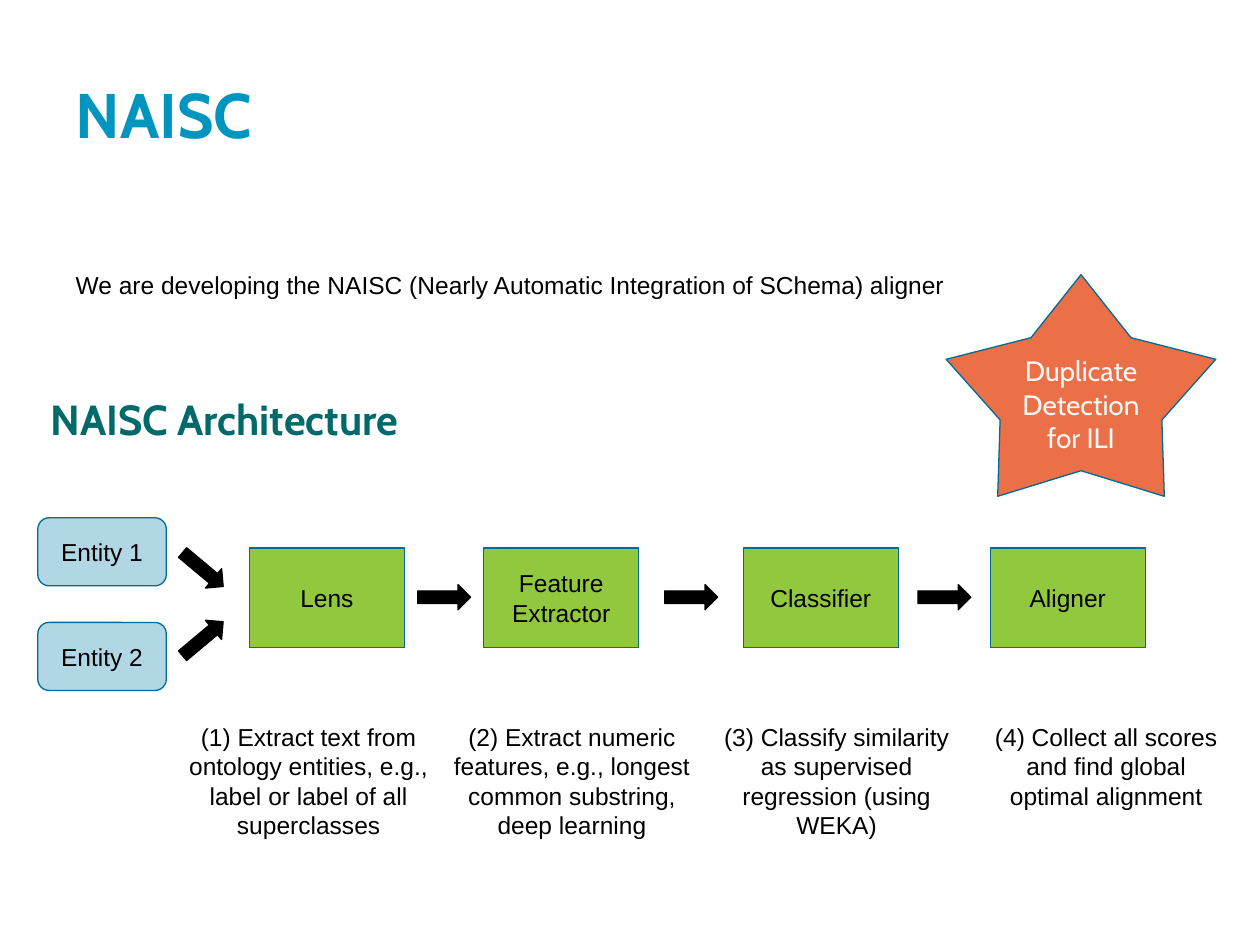
from dataclasses import dataclass
from itertools import pairwise

from pptx import Presentation
from pptx.dml.color import RGBColor as RGB
from pptx.enum.shapes import MSO_SHAPE as SHAPE
from pptx.enum.text import MSO_ANCHOR as ANCHOR, MSO_AUTO_SIZE as AUTO, PP_ALIGN as ALIGN
from pptx.util import Inches, Pt


@dataclass(frozen=True)
class Theme:
    title: str = "0095BF"
    heading: str = "00696A"
    ink: str = "000000"
    pale: str = "F8F8F8"
    entity: str = "B0D7E3"
    stage: str = "92C83E"
    star: str = "EB7047"
    outline: str = "006B94"
    display: str = "Cabin"
    text: str = "Arial"
    title_size: int = 36
    heading_size: int = 24
    star_size: int = 16
    text_size: int = 14


class Deck:
    COLS, ROWS = 100, 75

    def __init__(self, theme):
        self.theme = theme
        self.prs = Presentation()
        self.prs.slide_width, self.prs.slide_height = Inches(10), Inches(7.5)
        self.s = self.prs.slides.add_slide(self.prs.slide_layouts.get_by_name("Comparison"))

    def box(self, x, y, w, h):
        col = self.prs.slide_width / self.COLS
        row = self.prs.slide_height / self.ROWS
        return [round(v) for v in (x * col, y * row, w * col, h * row)]

    def set_text(self, sp, text, align=ALIGN.CENTER, anchor=ANCHOR.TOP, spacing=1.0, **font):
        tf = sp.text_frame
        tf.text = text
        inset = Inches(0.1)
        frame = dict(word_wrap=True, auto_size=AUTO.NONE, vertical_anchor=anchor,
                     margin_left=inset, margin_right=inset,
                     margin_top=inset, margin_bottom=inset)
        for name, value in frame.items():
            setattr(tf, name, value)
        style = dict(name=self.theme.text, size=self.theme.text_size,
                     color=self.theme.ink, bold=False) | font
        for p in tf.paragraphs:
            p.alignment, p.line_spacing, p.space_before = align, spacing, Pt(0)
            for r in p.runs:
                r.font.name, r.font.bold = style["name"], style["bold"]
                r.font.size = Pt(style["size"])
                r.font.color.rgb = RGB.from_string(style["color"])

    def placeholder(self, idx, text, at, **style):
        sp = next(ph for ph in self.s.placeholders if ph.placeholder_format.idx == idx)
        sp.left, sp.top, sp.width, sp.height = self.box(*at)
        self.set_text(sp, text, align=ALIGN.LEFT, **style)

    def caption(self, text, at):
        self.set_text(self.s.shapes.add_textbox(*self.box(*at)), text)

    def shape(self, kind, at, fill, line, text="", rotation=0, **font):
        sp = self.s.shapes.add_shape(kind, *self.box(*at))
        sp.shadow.inherit = False
        sp.fill.solid()
        sp.fill.fore_color.rgb = RGB.from_string(fill)
        sp.line.color.rgb = RGB.from_string(line)
        sp.line.width = Pt(0.75)
        sp.rotation = rotation
        if text:
            self.set_text(sp, text, anchor=ANCHOR.MIDDLE, **font)
        return sp

    def arrow(self, x, y, rotation=0):
        ink = self.theme.ink
        self.shape(SHAPE.RIGHT_ARROW, (x, y, 4.2, 2), ink, ink, rotation=rotation)

    def save(self):
        for ph in list(self.s.placeholders):
            if not ph.text_frame.text:
                ph.element.getparent().remove(ph.element)
        self.prs.save("out.pptx")


STAGE_W = 12.3
STAGES = [
    (19.8, "Lens", 13.8,
     "(1) Extract text from ontology entities, e.g., label or label of all superclasses"),
    (38.4, "Feature\nExtractor", 34.7,
     "(2) Extract numeric features, e.g., longest common substring, deep learning"),
    (59, "Classifier", 55.7,
     "(3) Classify similarity as supervised regression (using WEKA)"),
    (78.6, "Aligner", 77.1,
     "(4) Collect all scores and find global optimal alignment"),
]
ENTITIES = [("Entity 1", 41.1, 44.2, 39.9), ("Entity 2", 49.4, 49.7, -39.9)]


def main():
    t = Theme()
    deck = Deck(t)
    deck.placeholder(0, "NAISC", (5, 5, 90, 11.8),
                     name=t.display, size=t.title_size, color=t.title, bold=True)
    deck.placeholder(
        1, "We are developing the NAISC (Nearly Automatic Integration of SChema) aligner",
        (5, 20, 90, 6.4), spacing=1.18)
    deck.placeholder(3, "NAISC Architecture", (3, 30.2, 41.5, 7.9),
                     name=t.display, size=t.heading_size, color=t.heading, bold=True)

    for name, y, arrow_y, turn in ENTITIES:
        deck.shape(SHAPE.ROUNDED_RECTANGLE, (3, y, 10.2, 5.4), t.entity, t.outline, name)
        deck.arrow(14, arrow_y, turn)

    for x, name, caption_x, caption in STAGES:
        deck.shape(SHAPE.RECTANGLE, (x, 43.5, STAGE_W, 7.9), t.stage, t.outline, name)
        deck.caption(caption, (caption_x, 56.3, 21.4, 10.2))

    for (x, *_), (next_x, *_) in pairwise(STAGES):
        deck.arrow((x + STAGE_W + next_x - 4.2) / 2, 46.4)

    star = deck.shape(SHAPE.STAR_5_POINT, (75.1, 21.8, 21.4, 17.6), t.star, t.outline,
                      "Duplicate Detection for ILI",
                      name=t.display, size=t.star_size, color=t.pale)
    star.adjustments[0] = 0.3
    deck.save()


if __name__ == "__main__":
    main()
